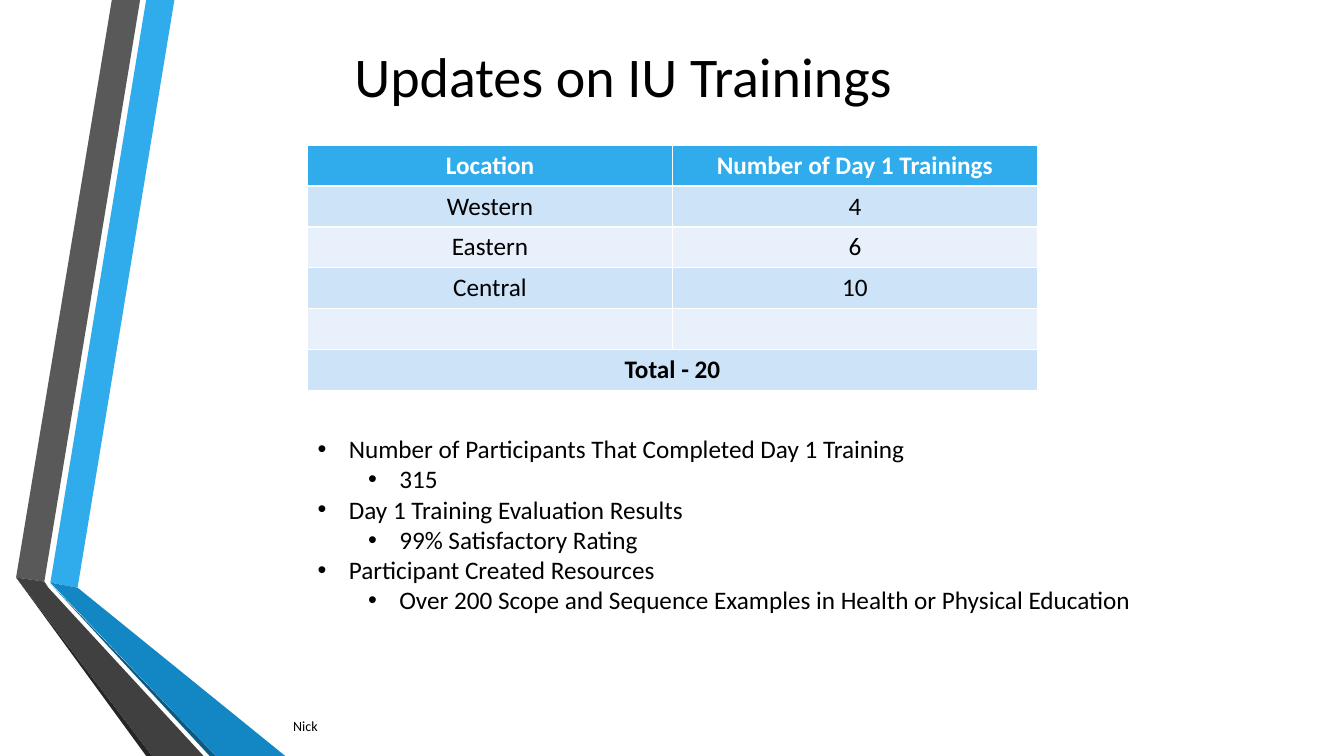
from dataclasses import dataclass

import pptx
import pptx.dml.color
import pptx.enum.text
import pptx.oxml
import pptx.oxml.ns
import pptx.util

Inches = pptx.util.Inches
FONT = "Calibri"
COLORS = {
    "white": "FFFFFF", "black": "000000",
    "blue": "30ACEC", "mid_blue": "1287C3", "deep_blue": "0C5A82",
    "gray": "595959", "dark_gray": "404040", "near_black": "262626",
    "band_dark": "CDE3F8", "band_light": "E8F1FB",
}


@dataclass
class Ribbon:
    color: str
    points: list[tuple[float, float]]


@dataclass
class Bullet:
    text: str
    level: int


RIBBONS = [
    Ribbon("blue", [(0.5, 5.78), (0.77, 5.83), (1.73, 0), (1.45, 0)]),
    Ribbon("gray", [(1.39, 0), (1.11, 0), (0.16, 5.73), (0.44, 5.77)]),
    Ribbon("near_black", [(0.16, 5.73), (1.45, 7.5), (1.51, 7.5)]),
    Ribbon("deep_blue", [(0.5, 5.79), (2.08, 7.5), (2.14, 7.5)]),
    Ribbon("mid_blue", [(0.5, 5.78), (2.14, 7.5), (2.83, 7.5), (0.77, 5.83)]),
    Ribbon("dark_gray", [(2.02, 7.5), (0.48, 5.83), (0.44, 5.77), (0.16, 5.73), (1.51, 7.5)]),
]
TRAININGS = [
    ("Location", "Number of Day 1 Trainings"),
    ("Western", "4"),
    ("Eastern", "6"),
    ("Central", "10"),
    ("", ""),
    ("Total - 20", ""),
]
BULLETS = [
    Bullet("Number of Participants That Completed Day 1 Training", 0),
    Bullet("315", 1),
    Bullet("Day 1 Training Evaluation Results", 0),
    Bullet("99% Satisfactory Rating", 1),
    Bullet("Participant Created Resources", 0),
    Bullet("Over 200 Scope and Sequence Examples in Health or Physical Education", 1),
]


def rgb(name: str) -> pptx.dml.color.RGBColor:
    return pptx.dml.color.RGBColor.from_string(COLORS[name])


def place(shape, left: float, top: float, width: float, height: float) -> None:
    shape.left, shape.top = Inches(left), Inches(top)
    shape.width, shape.height = Inches(width), Inches(height)


def format_para(para, size: int, color: str = "black", bold: bool = False) -> None:
    for span in para.runs:
        span.font.name = FONT
        span.font.size = pptx.util.Pt(size)
        span.font.bold = bold
        span.font.color.rgb = rgb(color)


def draw_ribbon(page, ribbon: Ribbon) -> None:
    points = [(Inches(x), Inches(y)) for x, y in ribbon.points]
    builder = page.shapes.build_freeform(*points[0])
    builder.add_line_segments(points[1:], close=True)
    shape = builder.convert_to_shape()
    shape.shadow.inherit = False
    shape.fill.solid()
    shape.fill.fore_color.rgb = rgb(ribbon.color)
    shape.line.fill.background()


def draw_title(page) -> None:
    title = page.shapes.title
    place(title, 1.72, 0.25, 8.92, 0.99)
    frame = title.text_frame
    frame.text = "Updates on IU Trainings"
    frame.vertical_anchor = pptx.enum.text.MSO_ANCHOR.MIDDLE
    frame.paragraphs[0].alignment = pptx.enum.text.PP_ALIGN.CENTER
    format_para(frame.paragraphs[0], 40)


def draw_table(page) -> None:
    last = len(TRAININGS) - 1
    table = page.shapes.add_table(
        len(TRAININGS), 2, Inches(3.05), Inches(1.44), Inches(7.24), Inches(2.43)
    ).table
    table.cell(last, 0).merge(table.cell(last, 1))
    for row, texts in enumerate(TRAININGS):
        header = row == 0
        band = "blue" if header else ("band_dark" if row % 2 else "band_light")
        for column, text in enumerate(texts):
            cell = table.cell(row, column)
            cell.fill.solid()
            cell.fill.fore_color.rgb = rgb(band)
            if text:
                cell.text_frame.text = text
                para = cell.text_frame.paragraphs[0]
                para.alignment = pptx.enum.text.PP_ALIGN.CENTER
                format_para(para, 18, "white" if header else "black", row in (0, last))


def add_bullet_mark(para, level: int) -> None:
    properties = para._p.get_or_add_pPr()
    properties.set("marL", str(Inches(0.31 + 0.5 * level)))
    properties.set("indent", str(Inches(-0.31)))
    namespace = pptx.oxml.ns.nsdecls("a")
    for element in ('buFont typeface="Arial"', 'buChar char="•"'):
        tag, attribute = element.split(" ")
        properties.append(pptx.oxml.parse_xml(f"<a:{tag} {namespace} {attribute}/>"))


def draw_bullets(page) -> None:
    body = page.placeholders[1]
    place(body, 3.05, 4.25, 9.92, 1.92)
    frame = body.text_frame
    frame.auto_size = pptx.enum.text.MSO_AUTO_SIZE.NONE
    frame.vertical_anchor = pptx.enum.text.MSO_ANCHOR.TOP
    frame.text = "\n".join(bullet.text for bullet in BULLETS)
    for para, bullet in zip(frame.paragraphs, BULLETS):
        para.level = bullet.level
        para.line_spacing = 1.0
        para.space_before = pptx.util.Pt(0)
        add_bullet_mark(para, bullet.level)
        format_para(para, 18)


def draw_presenter(page) -> None:
    box = page.shapes.add_textbox(Inches(2.81), Inches(7.03), Inches(7.75), Inches(0.35))
    frame = box.text_frame
    frame.word_wrap = True
    frame.vertical_anchor = pptx.enum.text.MSO_ANCHOR.MIDDLE
    frame.text = "Nick"
    format_para(frame.paragraphs[0], 10)


def main() -> None:
    deck = pptx.Presentation()
    deck.slide_width, deck.slide_height = Inches(13.33), Inches(7.5)
    page = deck.slides.add_slide(deck.slide_layouts[1])
    page.background.fill.solid()
    page.background.fill.fore_color.rgb = rgb("white")

    # Folded ribbons on the left edge
    for ribbon in RIBBONS:
        draw_ribbon(page, ribbon)

    # Title, training counts, results and presenter
    draw_title(page)
    draw_table(page)
    draw_bullets(page)
    draw_presenter(page)

    deck.save("out.pptx")


if __name__ == "__main__":
    main()
